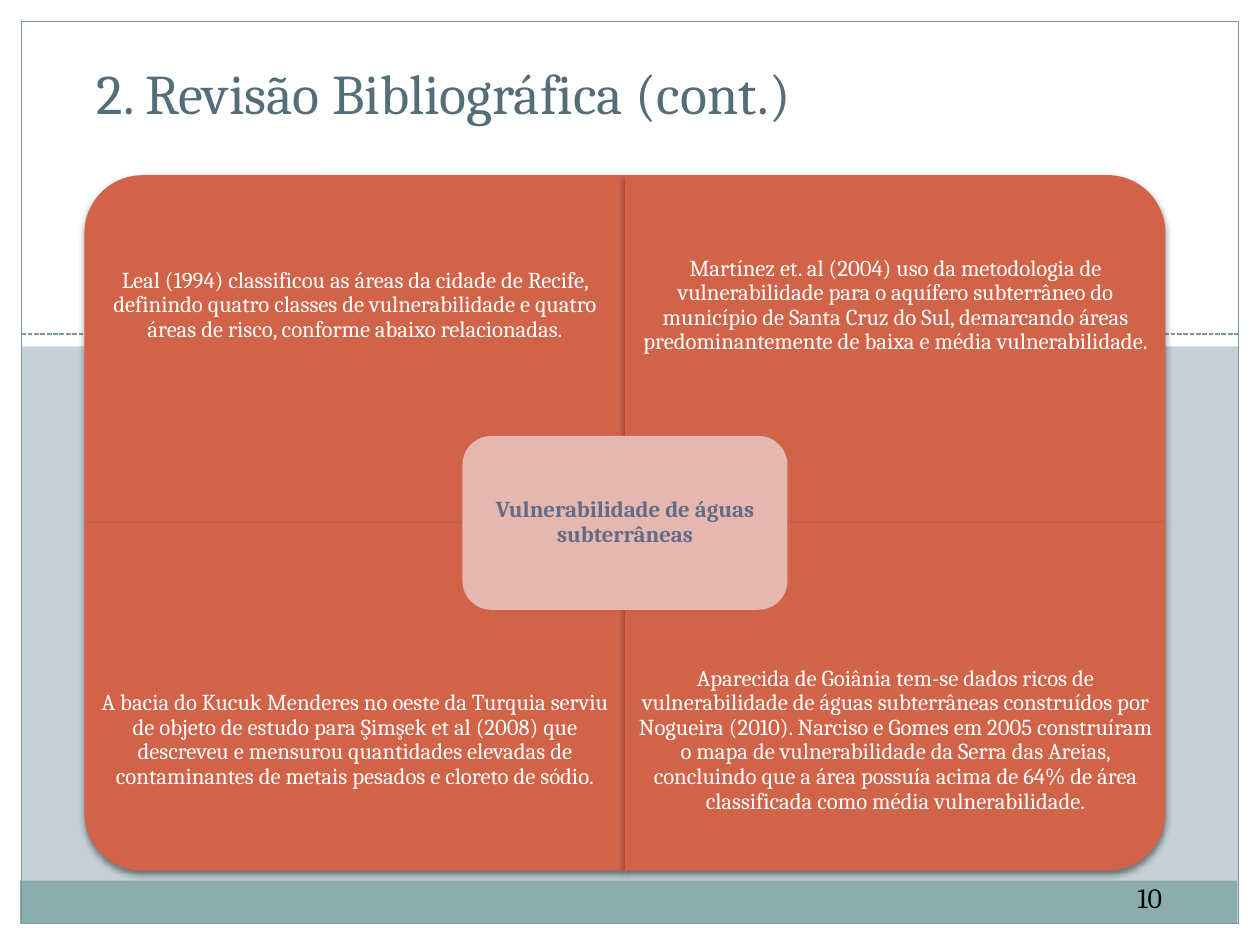
"""Build the literature review slide: four findings around a central theme."""
import pptx
import pptx.dml.color
import pptx.enum.dml
import pptx.enum.shapes
import pptx.enum.text
import pptx.oxml
import pptx.oxml.ns
import pptx.util

Inches = pptx.util.Inches
Pt = pptx.util.Pt
SHAPE = pptx.enum.shapes.MSO_SHAPE
ALIGN = pptx.enum.text.PP_ALIGN
ANCHOR = pptx.enum.text.MSO_ANCHOR

TITLE = "2. Revisão Bibliográfica (cont.)"
PAGE_NUMBER = "10"
THEME_TEXT = "Vulnerabilidade de águas subterrâneas"
QUADRANTS = [
    (0, 0, 270, "Leal (1994) classificou as áreas da cidade de Recife, definindo quatro classes de "
     "vulnerabilidade e quatro áreas de risco, conforme abaixo relacionadas."),
    (1, 0, 0, "Martínez et. al (2004) uso da metodologia de vulnerabilidade para o aquífero "
     "subterrâneo do município de Santa Cruz do Sul, demarcando áreas predominantemente de baixa "
     "e média vulnerabilidade."),
    (0, 1, 180, "A bacia do Kucuk Menderes no oeste da Turquia serviu de objeto de estudo para "
     "Şimşek et al (2008) que descreveu e mensurou quantidades elevadas de contaminantes de "
     "metais pesados e cloreto de sódio."),
    (1, 1, 90, "Aparecida de Goiânia tem-se dados ricos de vulnerabilidade de águas subterrâneas "
     "construídos por Nogueira (2010). Narciso e Gomes em 2005 construíram o mapa de "
     "vulnerabilidade da Serra das Areias, concluindo que a área possuía acima de 64% de área "
     "classificada como média vulnerabilidade."),
]

THEME = {
    "font": "Cambria",
    "background": "C5D1D7", "white": "FFFFFF", "band": "8CADAE", "line": "7C999A",
    "title": "546D7A", "number": "000000", "quadrant": "D16349",
    "center": "E5B7B1", "center_text": "646B86",
    "title_size": 32, "number_size": 16, "body_size": 13,
}

SLIDE_WIDTH, SLIDE_HEIGHT, MARGIN = 10, 7.5, 0.17
GRID_LEFT, GRID_TOP = 0.67, 1.39
CELL_WIDTH, CELL_HEIGHT = 4.29, 2.76
TEXT_HEIGHT = CELL_HEIGHT * 0.75
CENTER_WIDTH, CENTER_HEIGHT = 2.58, 1.38

PANELS = [
    ((0, SLIDE_HEIGHT - MARGIN, SLIDE_WIDTH, MARGIN), "white"),
    ((SLIDE_WIDTH - MARGIN, 0, MARGIN, SLIDE_HEIGHT), "white"),
    ((0, 0, MARGIN, SLIDE_HEIGHT), "white"),
    ((0, 0, SLIDE_WIDTH, 2.75), "white"),
    ((0.16, 6.99, 9.66, 0.34), "band"),
]

SHADOW = (
    f'<a:effectLst {pptx.oxml.ns.nsdecls("a")}>'
    f'<a:outerShdw blurRad="{Pt(4)}" dist="{Pt(2)}" dir="5400000" rotWithShape="0">'
    '<a:srgbClr val="000000"><a:alpha val="45000"/></a:srgbClr></a:outerShdw></a:effectLst>'
)


def color(name):
    return pptx.dml.color.RGBColor.from_string(THEME[name])


def add_panel(slide, kind, box, fill=None):
    shape = slide.shapes.add_shape(kind, *map(Inches, box))
    shape.shadow.inherit = False
    shape.line.fill.background()
    if fill:
        shape.fill.solid()
        shape.fill.fore_color.rgb = color(fill)
    else:
        shape.fill.background()
    return shape


def write(shape, text, size, font_color, align=ALIGN.CENTER, anchor=ANCHOR.MIDDLE,
          inset=0.1, spacing=1.0, bold=False):
    frame = shape.text_frame
    frame.word_wrap = True
    frame.vertical_anchor = anchor
    frame.margin_left = frame.margin_right = Inches(inset)
    frame.margin_top = frame.margin_bottom = Inches(min(inset, 0.1))
    paragraph = frame.paragraphs[0]
    paragraph.alignment = align
    paragraph.line_spacing = spacing
    run = paragraph.add_run()
    run.text = text
    run.font.name = THEME["font"]
    run.font.size = Pt(THEME[size])
    run.font.bold = bold
    run.font.color.rgb = color(font_color)


def add_text(slide, box, *content, **options):
    write(slide.shapes.add_textbox(*map(Inches, box)), *content, **options)


def add_backdrop(slide):
    slide.background.fill.solid()
    slide.background.fill.fore_color.rgb = color("background")
    for box, fill in PANELS:
        add_panel(slide, SHAPE.RECTANGLE, box, fill)
    divider = slide.shapes.add_connector(
        pptx.enum.shapes.MSO_CONNECTOR.STRAIGHT,
        Inches(MARGIN), Inches(2.65), Inches(SLIDE_WIDTH - MARGIN), Inches(2.65))
    divider.line.color.rgb = color("line")
    divider.line.width = Pt(0.9)
    divider.line.dash_style = pptx.enum.dml.MSO_LINE.SQUARE_DOT
    divider._element.spPr.append(
        pptx.oxml.parse_xml(f'<a:effectLst {pptx.oxml.ns.nsdecls("a")}/>'))
    border = add_panel(slide, SHAPE.RECTANGLE,
                       (MARGIN, MARGIN, SLIDE_WIDTH - 2 * MARGIN, SLIDE_HEIGHT - 2 * MARGIN))
    border.line.color.rgb = color("line")
    border.line.width = Pt(0.75)


def add_quadrant(slide, column, row, rotation, text):
    left = GRID_LEFT + column * CELL_WIDTH
    top = GRID_TOP + row * CELL_HEIGHT
    width, height = CELL_WIDTH, CELL_HEIGHT
    if rotation % 180:
        width, height = height, width
    box = (left + (CELL_WIDTH - width) / 2, top + (CELL_HEIGHT - height) / 2, width, height)
    shape = add_panel(slide, SHAPE.ROUND_1_RECTANGLE, box, "quadrant")
    shape.rotation = rotation
    properties = shape._element.spPr
    properties.replace(properties.find(pptx.oxml.ns.qn("a:effectLst")),
                       pptx.oxml.parse_xml(SHADOW))
    text_top = top + row * (CELL_HEIGHT - TEXT_HEIGHT)
    add_text(slide, (left, text_top, CELL_WIDTH, TEXT_HEIGHT), text,
             "body_size", "white", spacing=0.9)


def main():
    presentation = pptx.Presentation()
    presentation.slide_width = Inches(SLIDE_WIDTH)
    presentation.slide_height = Inches(SLIDE_HEIGHT)
    slide = presentation.slides.add_slide(presentation.slide_layouts[6])
    add_backdrop(slide)
    add_text(slide, (8.49, 6.92, 1.27, 0.4), PAGE_NUMBER, "number_size", "number", inset=0.05)
    add_text(slide, (0.67, 0.5, 8.5, 0.6), TITLE, "title_size", "title",
             align=ALIGN.LEFT, anchor=ANCHOR.BOTTOM, inset=0.1)
    for quadrant in QUADRANTS:
        add_quadrant(slide, *quadrant)
    center = add_panel(slide, SHAPE.ROUNDED_RECTANGLE,
                       (GRID_LEFT + CELL_WIDTH - CENTER_WIDTH / 2,
                        GRID_TOP + CELL_HEIGHT - CENTER_HEIGHT / 2,
                        CENTER_WIDTH, CENTER_HEIGHT), "center")
    write(center, THEME_TEXT, "body_size", "center_text", inset=0.05, spacing=0.9, bold=True)
    presentation.save("out.pptx")


if __name__ == "__main__":
    main()
